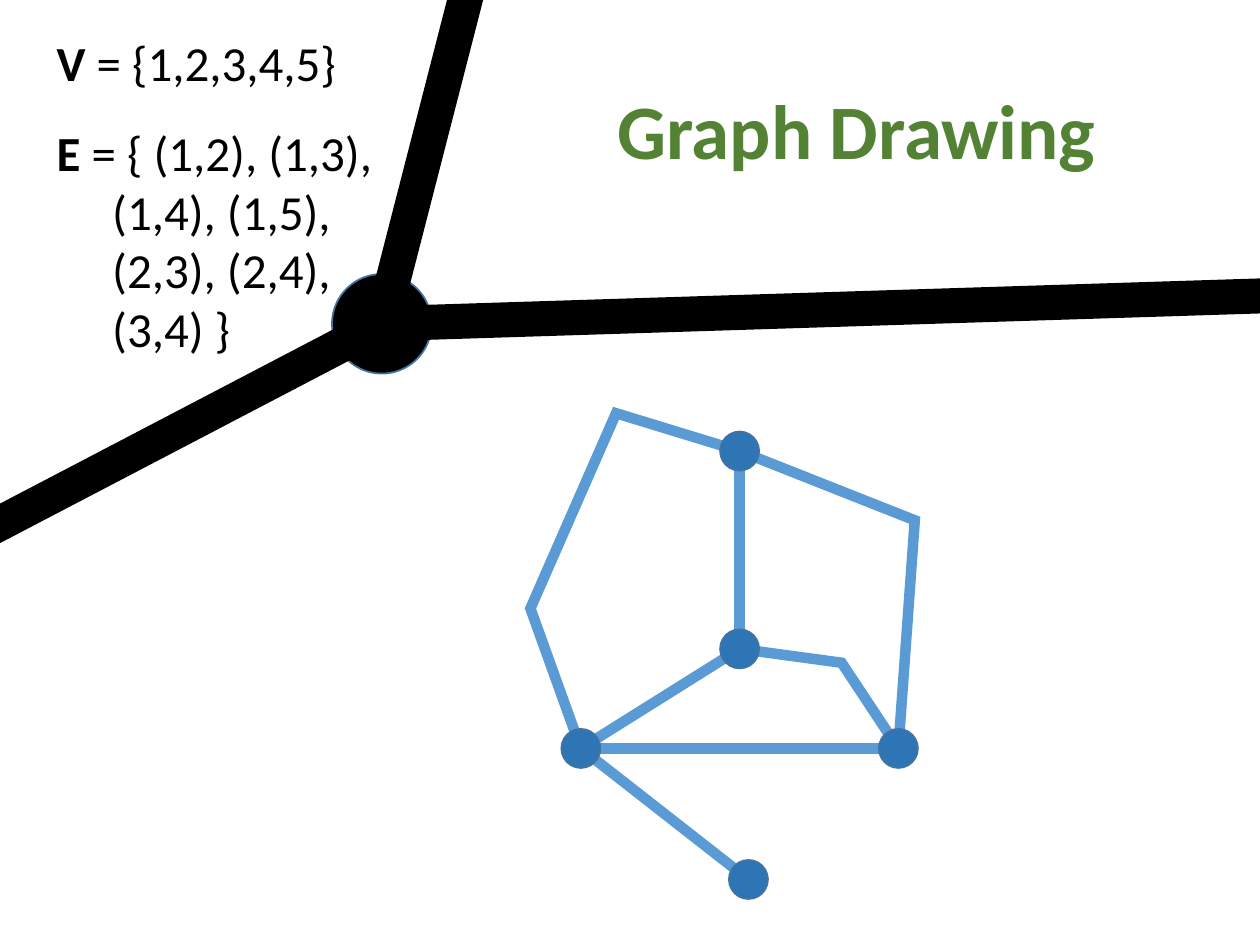
from lxml import etree
from pptx import Presentation
from pptx.dml.color import RGBColor
from pptx.enum import shapes as kinds, text as txt
from pptx.oxml import ns
from pptx.util import Inches, Pt

COLORS = {"edge": "5B9BD5", "node": "2E75B6", "outline": "43739E",
          "title": "548235", "black": "000000"}

# Vertex centres in inches
NODES = {"top": (5.87, 3.58), "middle": (5.87, 5.15), "left": (4.61, 5.94),
         "right": (7.13, 5.94), "bottom": (5.94, 6.98)}
STRAIGHT_EDGES = [("top", "middle"), ("left", "right"),
                  ("left", "middle"), ("left", "bottom")]
# Bent edges: start, bend points, end
BENT_EDGES = [("middle", [(6.68, 5.26)], "right"),
              ("top", [(7.26, 4.13)], "right"),
              ("left", [(4.21, 4.83), (4.89, 3.28)], "top")]

# Large vertex whose edges divide the slide
HUB = (3.03, 2.57)
HUB_ENDS = [(-0.28, 4.3), (10.59, 2.33), (3.74, -0.19)]


def rgb(name):
    return RGBColor.from_string(COLORS[name])


def style_line(line, color, width):
    line.color.rgb = rgb(color)
    line.width = Pt(width)


def add_edge(slide, start, end, color, width):
    edge = slide.shapes.add_connector(
        kinds.MSO_CONNECTOR.STRAIGHT, *map(Inches, start + end))
    style_line(edge.line, color, width)
    etree.SubElement(edge._element.spPr, ns.qn("a:effectLst"))


def add_bent_edge(slide, start, bends, end):
    first, *others = [(Inches(x), Inches(y)) for x, y in [start, *bends, end]]
    builder = slide.shapes.build_freeform(*first)
    builder.add_line_segments(others, close=False)
    edge = builder.convert_to_shape()
    edge.fill.background()
    edge.shadow.inherit = False
    style_line(edge.line, "edge", 6)
    # Sharp corners at the bends
    outline = edge._element.spPr.find(ns.qn("a:ln"))
    etree.SubElement(outline, ns.qn("a:miter"), lim="800000")


def add_node(slide, center, diameter, color):
    x, y = center
    node = slide.shapes.add_shape(
        kinds.MSO_SHAPE.OVAL, Inches(x - diameter / 2), Inches(y - diameter / 2),
        Inches(diameter), Inches(diameter))
    node.fill.solid()
    node.fill.fore_color.rgb = rgb(color)
    node.shadow.inherit = False
    style_line(node.line, "outline", 1)


def place(holder, left, top, width, height):
    holder.left, holder.top = Inches(left), Inches(top)
    holder.width, holder.height = Inches(width), Inches(height)
    frame = holder.text_frame
    frame.word_wrap = False
    frame.auto_size = txt.MSO_AUTO_SIZE.NONE
    return frame


def format_run(run, size, color, bold):
    run.font.name = "Calibri"
    run.font.size = Pt(size)
    run.font.bold = bold
    run.font.color.rgb = rgb(color)


def write_title(holder):
    frame = place(holder, 4.76, 0.6, 4.04, 0.84)
    frame.text = "Graph Drawing"
    heading = frame.paragraphs[0]
    heading.alignment = txt.PP_ALIGN.RIGHT
    format_run(heading.runs[0], 44, "title", True)


def write_set(holder, box, symbol, lines):
    """Write a set: bold symbol first, later lines indented below it."""
    frame = place(holder, *box)
    frame.text = "\n".join([symbol] + lines[1:])
    frame.paragraphs[0].add_run().text = lines[0]
    for row, line in enumerate(frame.paragraphs):
        line.space_before = Pt(0)
        line.line_spacing = 1.0
        properties = line._p.get_or_add_pPr()
        properties.set("marL", str(Inches(0.44) if row else 0))
        properties.set("indent", "0")
        etree.SubElement(properties, ns.qn("a:buNone"))
        for run in line.runs:
            format_run(run, 28, "black", run.text == symbol)


def main():
    prs = Presentation()
    prs.slide_width, prs.slide_height = Inches(10), Inches(7.5)
    slide = prs.slides.add_slide(prs.slide_layouts.get_by_name("Two Content"))
    title, vertex_set, edge_set = list(slide.placeholders)[:3]

    # Title and the definition of the graph
    write_title(title)
    write_set(vertex_set, (0.35, 0.21, 2.44, 0.57), "V", [" = {1,2,3,4,5}"])
    write_set(edge_set, (0.35, 0.92, 2.74, 1.99), "E",
              [" = { (1,2), (1,3),", "(1,4), (1,5),", "(2,3), (2,4),", "(3,4) }"])

    # Large vertex and its edges
    add_node(slide, HUB, 0.79, "black")
    for end in HUB_ENDS:
        add_edge(slide, HUB, end, "black", 20)

    # Small graph, vertices above the edges
    for start, bends, end in BENT_EDGES:
        add_bent_edge(slide, NODES[start], bends, NODES[end])
    for start, end in STRAIGHT_EDGES:
        add_edge(slide, NODES[start], NODES[end], "edge", 6)
    for center in NODES.values():
        add_node(slide, center, 0.31, "node")

    prs.save("out.pptx")


if __name__ == "__main__":
    main()
